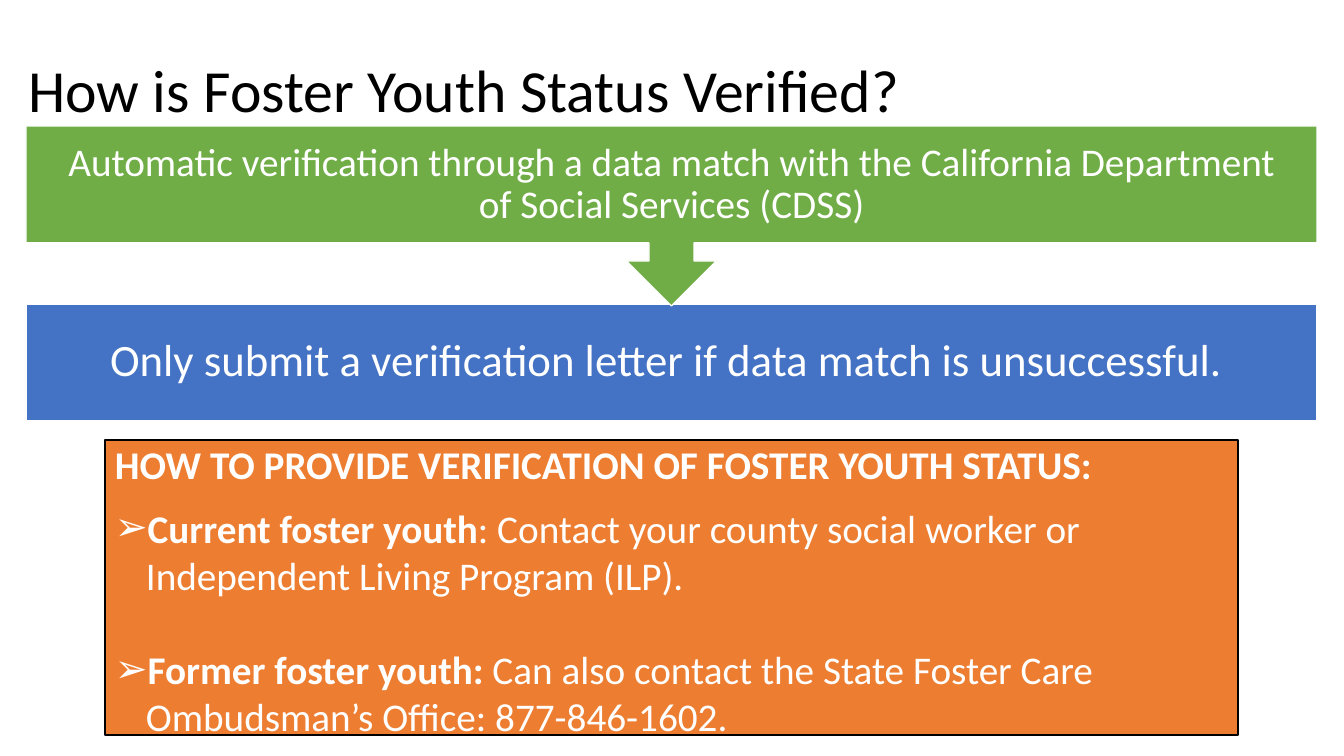
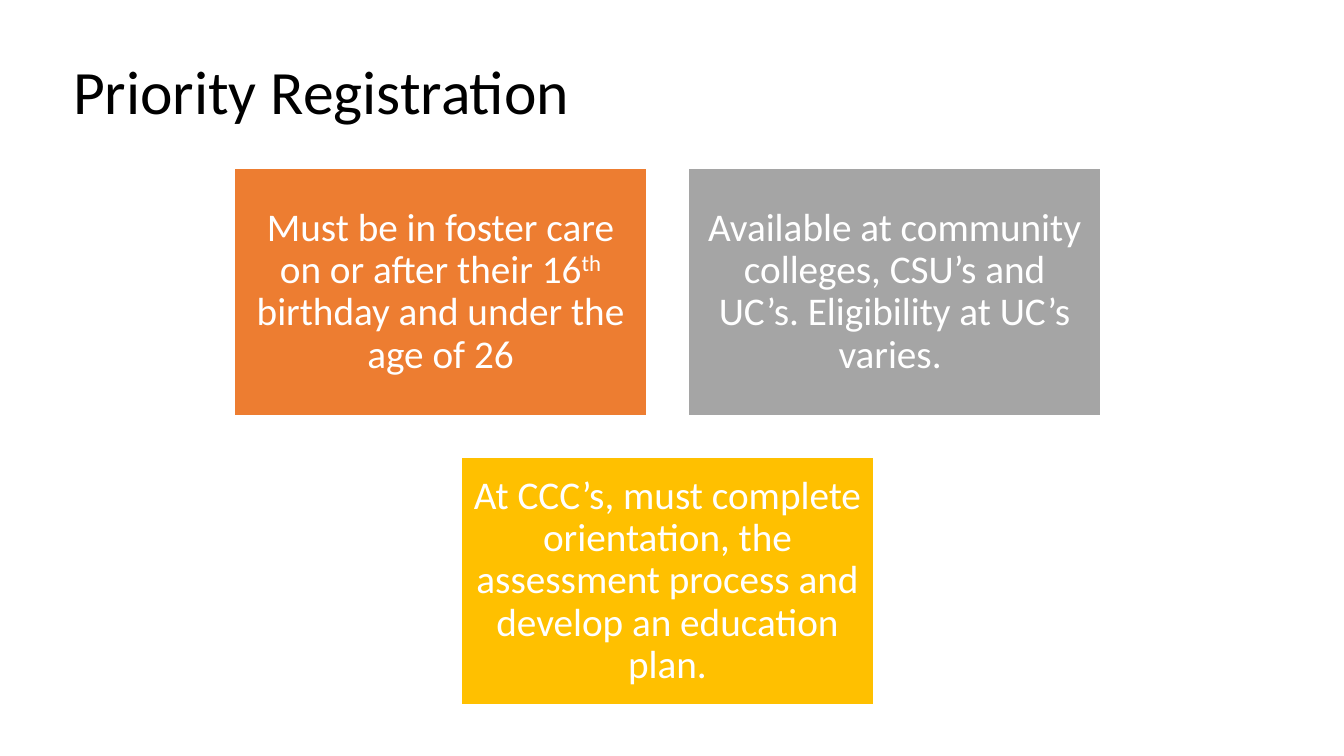
from lxml.etree import SubElement
from pptx import Presentation
from pptx.dml.color import RGBColor
from pptx.enum.shapes import MSO_SHAPE as Preset
from pptx.enum.text import MSO_ANCHOR as Anchor, MSO_AUTO_SIZE as AutoSize, PP_ALIGN as Align
from pptx.oxml.ns import qn
from pptx.util import Emu, Pt

SCALE = 914400 / 100.8
FONT = "Calibri"
COLORS = {
    "black": "000000",
    "white": "FFFFFF",
    "blue": "4472C4",
    "green": "70AD47",
    "orange": "ED7D31",
    "gray": "A5A5A5",
    "gold": "FFC000",
}
VERIFICATION_STEPS = [
    (12, "Current foster youth",
     ": Contact your county social worker or Independent Living Program (ILP)."),
    (34, "Former foster youth:",
     " Can also contact the State Foster Care Ombudsman’s Office: 877-846-1602."),
]
REGISTRATION_CARDS = [
    ("orange", ["Must be in foster care on or after their 16", "th",
                " birthday and under the age of 26"]),
    ("gray", ["Available at community colleges, CSU’s and UC’s. Eligibility at UC’s varies. "]),
    ("gold", ["At CCC’s, must complete orientation, the assessment process "
              "and develop an education plan."]),
]


def px(length):
    return Emu(round(length * SCALE))


def color(name):
    return RGBColor.from_string(COLORS[name])


def add_run(paragraph, text, size, color_name="white", bold=False):
    run = paragraph.add_run()
    run.text = text
    run.font.name = FONT
    run.font.size = Pt(size)
    run.font.bold = bold
    run.font.color.rgb = color(color_name)
    return run


def set_insets(frame, horizontal, vertical):
    frame.margin_left = frame.margin_right = px(horizontal)
    frame.margin_top = frame.margin_bottom = px(vertical)


def add_titled_slide(presentation, title, box, size):
    slide = presentation.slides.add_slide(presentation.slide_layouts[5])
    shape = slide.shapes.title
    shape.left, shape.top, shape.width, shape.height = map(px, box)
    frame = shape.text_frame
    frame.auto_size = AutoSize.NONE
    frame.vertical_anchor = Anchor.MIDDLE
    paragraph = frame.paragraphs[0]
    paragraph.alignment = Align.LEFT
    paragraph.line_spacing = 0.9
    add_run(paragraph, title, size, "black")
    return slide


def add_panel(slide, preset, box, fill, line="white"):
    shape = slide.shapes.add_shape(preset, *map(px, box))
    shape.shadow.inherit = False
    shape.fill.solid()
    shape.fill.fore_color.rgb = color(fill)
    shape.line.color.rgb = color(line)
    shape.line.width = Pt(1)
    shape.text_frame.word_wrap = True
    return shape


def add_centered_panel(slide, preset, box, fill, texts, size, inset):
    frame = add_panel(slide, preset, box, fill).text_frame
    set_insets(frame, inset, inset)
    frame.vertical_anchor = Anchor.MIDDLE
    paragraph = frame.paragraphs[0]
    paragraph.alignment = Align.CENTER
    paragraph.line_spacing = 0.9
    return [add_run(paragraph, text, size) for text in texts]


def add_bullet(paragraph, indent):
    properties = paragraph._p.get_or_add_pPr()
    properties.set("marL", str(px(indent)))
    properties.set("indent", str(-px(indent)))
    SubElement(properties, qn("a:buFont")).set("typeface", "Arial")
    SubElement(properties, qn("a:buChar")).set("char", "➢")


def add_verification_flow(slide, box):
    left, top, width, height = box
    step_height = 117
    add_centered_panel(
        slide, Preset.RECTANGLE, (left, top + height - step_height, width, step_height), "blue",
        ["Only submit a verification letter if data match is unsuccessful. "], 32, 25)
    add_centered_panel(
        slide, Preset.DOWN_ARROW_CALLOUT, (left, top, width, 180), "green",
        ["Automatic verification through a data match with the California "
         "Department of Social Services (CDSS)"], 28, 22)


def add_instructions(slide, box):
    frame = add_panel(slide, Preset.RECTANGLE, box, "orange", "black").text_frame
    set_insets(frame, 10, 0)
    frame.vertical_anchor = Anchor.TOP
    heading = frame.paragraphs[0]
    heading.alignment = Align.LEFT
    add_run(heading, "HOW TO PROVIDE VERIFICATION OF FOSTER YOUTH STATUS:", 28, bold=True)
    for space_before, audience, advice in VERIFICATION_STEPS:
        paragraph = frame.add_paragraph()
        paragraph.alignment = Align.LEFT
        paragraph.space_before = Pt(space_before)
        add_bullet(paragraph, 31)
        add_run(paragraph, audience, 28, bold=True)
        add_run(paragraph, advice, 28)


def add_registration_cards(slide, box):
    left, top, width, height = box
    gap = 41
    card_width, card_height = (width - gap) // 2, (height - gap) // 2
    positions = [
        (left, top),
        (left + card_width + gap, top),
        (left + (width - card_width) // 2, top + card_height + gap),
    ]
    for (x, y), (fill, texts) in zip(positions, REGISTRATION_CARDS):
        runs = add_centered_panel(
            slide, Preset.RECTANGLE, (x, y, card_width, card_height), fill, texts, 28, 12)
        for run in runs:
            if run.text == "th":
                run._r.get_or_add_rPr().set("baseline", "30000")


def build_verification_slide(presentation):
    slide = add_titled_slide(
        presentation, "How is Foster Youth Status Verified?", (18, 20, 1159, 146), 42.7)
    add_verification_flow(slide, (26, 126, 1291, 295))
    add_instructions(slide, (105, 440, 1133, 295))


def build_registration_slide(presentation):
    slide = add_titled_slide(presentation, "Priority Registration", (63, 22, 1218, 146), 44)
    add_registration_cards(slide, (234, 168, 867, 537))


def main():
    presentation = Presentation()
    presentation.slide_width, presentation.slide_height = px(1344), px(756)
    build_verification_slide(presentation)
    build_registration_slide(presentation)
    presentation.save("out.pptx")


if __name__ == "__main__":
    main()
